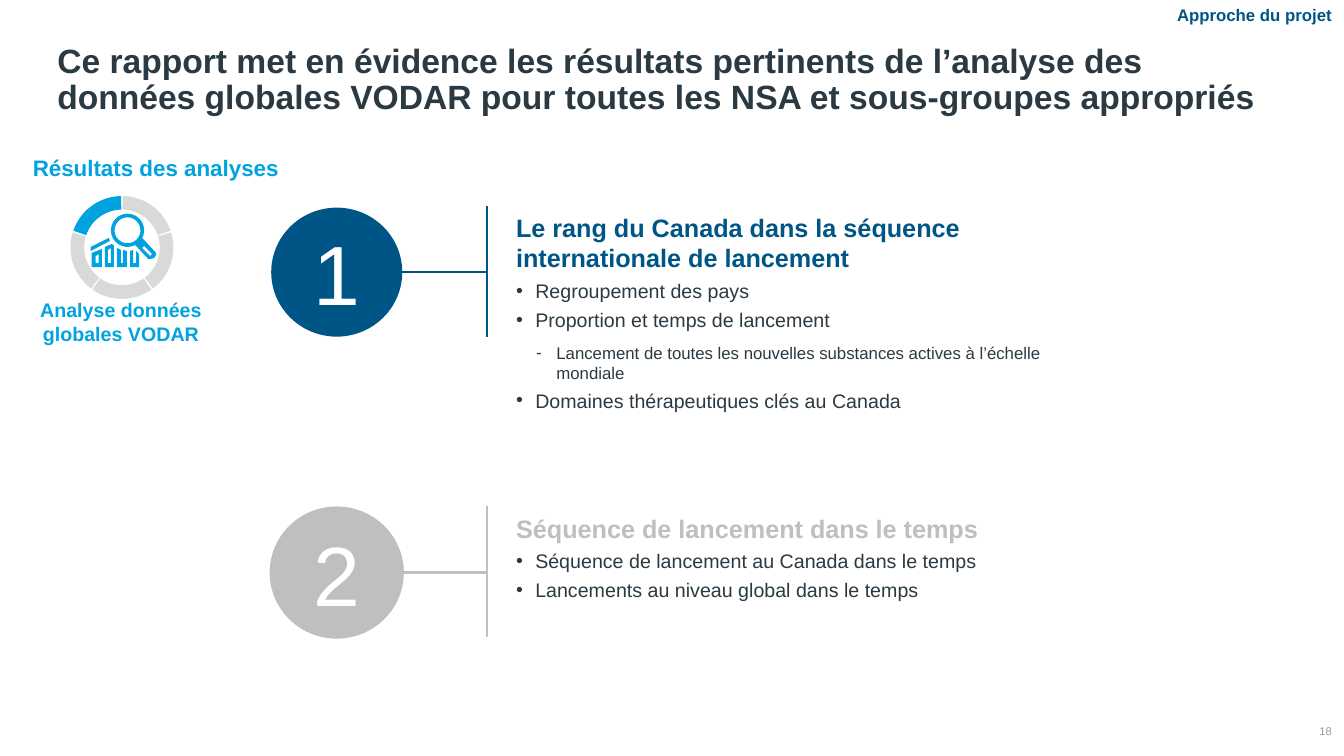
import math

from lxml import etree
from pptx import Presentation
from pptx import util as u
from pptx.dml.color import RGBColor
from pptx.enum import shapes, text
from pptx.oxml import ns

PX = 9144  # 100 px to the inch
FONT = "Arial"
NAVY, CYAN, DARK = "005587", "00A3E0", "2B3A42"
GREY, PALE, MUTED = "BFBFBF", "D9D9D9", "959CA0"
LEFT, CENTER, RIGHT = text.PP_ALIGN.LEFT, text.PP_ALIGN.CENTER, text.PP_ALIGN.RIGHT
MIDDLE, BOTTOM = text.MSO_ANCHOR.MIDDLE, text.MSO_ANCHOR.BOTTOM

# Bullet, level, indent px, hanging px, size pt, space before pt
POINT = ("•", 0, 19, 19, 14, 4)
SUBPOINT = ("-", 1, 40, 20, 12, 8)

# Chart-and-lens icon: each part is a list of closed contours in px
ICON_PARTS = [
    [[(101, 265), (101, 247), (91, 251), (91, 265)],
     [(95, 254), (95, 261), (98, 261), (98, 252)]],
    [[(113, 265), (113, 244), (111, 242), (104, 245), (104, 265)],
     [(107, 248), (107, 261), (110, 261), (110, 246)]],
    [[(116, 246), (116, 265), (126, 265), (126, 249),
      (122, 248), (122, 261), (120, 261), (120, 248)]],
    [[(129, 249), (129, 265), (138, 265), (138, 252),
      (135, 249), (135, 261), (132, 261), (132, 248)]],
    [[(90, 249), (109, 239), (108, 236), (90, 245)]],
    [[(134, 243), (141, 236), (154, 250), (155, 252),
      (153, 256), (149, 257), (147, 257)],
     [(141, 246), (149, 254), (151, 252), (143, 244)]],
]


def px(value):
    return u.Emu(round(value * PX))


def color(hex_string):
    return RGBColor.from_string(hex_string)


def style_para(para, size, hex_string, bold=False):
    font = para.font
    font.name, font.size, font.bold = FONT, u.Pt(size), bold
    font.color.rgb = color(hex_string)


def paint(shape, hex_string):
    shape.shadow.inherit = False
    shape.fill.solid()
    shape.fill.fore_color.rgb = color(hex_string)
    shape.line.fill.background()


def add_text(page, area, words, size, hex_string, bold=True, align=LEFT, anchor=None, wrap=True):
    box = page.shapes.add_textbox(*map(px, area))
    frame = box.text_frame
    frame.text = words
    frame.word_wrap = wrap
    if anchor is not None:
        frame.vertical_anchor = anchor
    para = frame.paragraphs[0]
    para.alignment = align
    style_para(para, size, hex_string, bold)
    return frame


def clear_margins(frame):
    frame.margin_left = frame.margin_right = frame.margin_top = frame.margin_bottom = 0


def add_bullet(frame, words, kind):
    mark, level, indent, hanging, size, before = kind
    para = frame.add_paragraph()
    para.text = words
    para.level = level
    props = para._p.get_or_add_pPr()
    props.set("marL", str(px(indent)))
    props.set("indent", str(-px(hanging)))
    etree.SubElement(props, ns.qn("a:buFont")).set("typeface", FONT)
    etree.SubElement(props, ns.qn("a:buChar")).set("char", mark)
    para.space_before = u.Pt(before)
    style_para(para, size, DARK)


def add_line(page, start, end, hex_string):
    line = page.shapes.add_connector(
        shapes.MSO_CONNECTOR.STRAIGHT, *map(px, (*start, *end)))
    line.line.color.rgb = color(hex_string)
    line.line.width = u.Pt(1.5)
    etree.SubElement(line._element.spPr, ns.qn("a:effectLst"))


def add_outline(page, contours, hex_string):
    scaled = [[(px(x), px(y)) for x, y in contour] for contour in contours]
    builder = page.shapes.build_freeform(*scaled[0][0], scale=1.0)
    for index, contour in enumerate(scaled):
        if index:
            builder.move_to(*contour[0])
        builder.add_line_segments(contour[1:], close=True)
    paint(builder.convert_to_shape(), hex_string)


def add_ring(page, center_x, center_y, outer, inner, colors):
    step = 360 / len(colors)

    def arc(radius, start, end):
        angles = [math.radians(start + (end - start) * i / 24) for i in range(25)]
        return [(center_x + radius * math.sin(a), center_y - radius * math.cos(a))
                for a in angles]

    for index, hex_string in enumerate(colors):
        start, end = index * step + 1, (index + 1) * step - 1
        add_outline(page, [arc(outer, start, end) + arc(inner, end, start)], hex_string)


def add_icon(page):
    add_ring(page, 121, 245.5, 51, 37.5, [PALE] * 4 + [CYAN])
    for contours in ICON_PARTS:
        add_outline(page, contours, CYAN)
    lens = page.shapes.add_shape(shapes.MSO_SHAPE.DONUT, *map(px, (110, 212, 33, 33)))
    lens.adjustments[0] = 0.11
    paint(lens, CYAN)


def add_section(page, top, number, hex_string, heading, bullets, width, height, outline=0):
    # Numbered circle
    circle = page.shapes.add_shape(
        shapes.MSO_SHAPE.OVAL, *map(px, (269, top + 2, 130, 128)))
    paint(circle, hex_string)
    if outline:
        circle.line.color.rgb = color(hex_string)
        circle.line.width = u.Pt(outline)
    frame = circle.text_frame
    frame.text = number
    frame.vertical_anchor = MIDDLE
    clear_margins(frame)
    frame.paragraphs[0].alignment = CENTER
    style_para(frame.paragraphs[0], 60, "FFFFFF")
    # Bracket
    add_line(page, (483, top), (483, top + 130), hex_string)
    add_line(page, (399, top + 66), (483, top + 66), hex_string)
    # Heading and bullets
    frame = add_text(page, (502, top + 2, width, height), heading, 18, hex_string)
    for words, kind in bullets:
        add_bullet(frame, words, kind)


def main():
    deck = Presentation()
    deck.slide_width, deck.slide_height = px(1333), px(750)
    page = deck.slides.add_slide(deck.slide_layouts[6])

    # Header and page number
    title = add_text(
        page, (47, 37, 1240, 84),
        "Ce rapport met en évidence les résultats pertinents de l’analyse des "
        "données globales VODAR pour toutes les NSA et sous-groupes appropriés",
        24, DARK, anchor=BOTTOM)
    title.paragraphs[0].line_spacing = 0.9
    add_text(page, (1155, 0, 176, 30), "Approche du projet", 12, NAVY,
             align=RIGHT, wrap=False)
    clear_margins(add_text(page, (1282, 716, 39, 19), "18", 8, MUTED, bold=False,
                           align=RIGHT, anchor=MIDDLE))

    # Left column
    add_text(page, (0, 148, 309, 37), "Résultats des analyses", 16, CYAN, align=CENTER)
    add_icon(page)
    add_text(page, (29, 291, 182, 57), "Analyse données globales VODAR", 14, CYAN,
             align=CENTER)

    # Numbered sections
    add_section(
        page, 204, "1", NAVY,
        "Le rang du Canada dans la séquence internationale de lancement",
        [("Regroupement des pays", POINT),
         ("Proportion et temps de lancement", POINT),
         ("Lancement de toutes les nouvelles substances actives à l’échelle mondiale",
          SUBPOINT),
         ("Domaines thérapeutiques clés au Canada", POINT)],
        542, 233)
    add_section(
        page, 502, "2", GREY, "Séquence de lancement dans le temps",
        [("Séquence de lancement au Canada dans le temps", POINT),
         ("Lancements au niveau global dans le temps", POINT)],
        689, 132, outline=2.25)

    deck.save("out.pptx")


if __name__ == "__main__":
    main()
